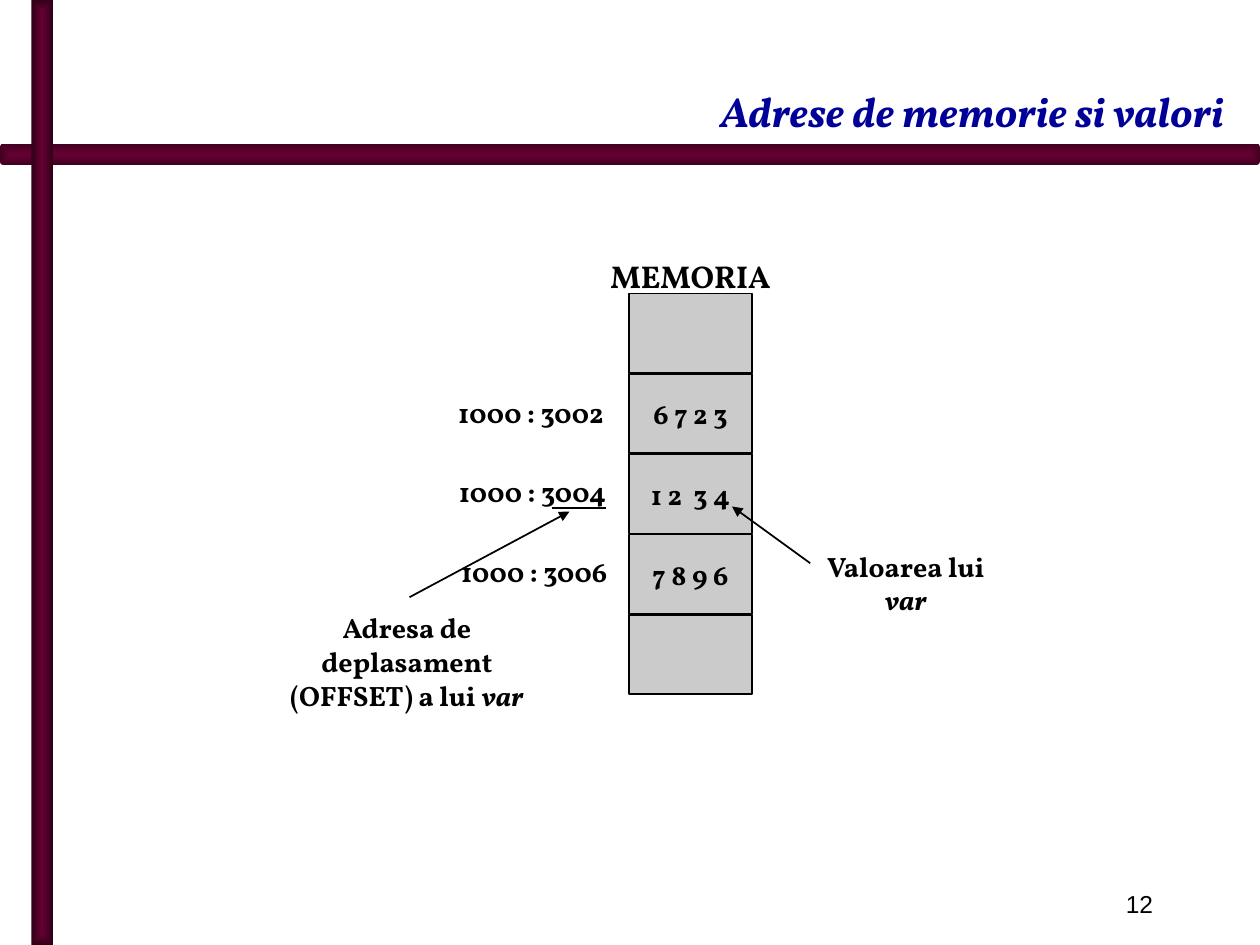
from lxml.etree import SubElement
from pptx import Presentation
from pptx.dml.color import RGBColor
from pptx.enum.shapes import MSO_CONNECTOR as Connector, MSO_SHAPE as Shape
from pptx.enum.text import MSO_ANCHOR as Anchor, PP_ALIGN as Align
from pptx.oxml.ns import qn
from pptx.util import Inches, Pt

BLACK = RGBColor(0x00, 0x00, 0x00)
NAVY = RGBColor(0x00, 0x00, 0x99)
GRAY = RGBColor(0xCB, 0xCB, 0xCB)
WINE = RGBColor(0x66, 0x00, 0x33)
DARK_WINE = RGBColor(0x41, 0x00, 0x20)
DEEP_WINE = RGBColor(0x2F, 0x00, 0x18)
FONT = "Vollkorn"

BARS = [
    (Shape.ROUNDED_RECTANGLE, (0, 1.14, 10, 0.17), DARK_WINE),
    (Shape.RECTANGLE, (0.25, 0, 0.17, 7.5), DEEP_WINE),
]
TITLE = "Adrese de memorie si valori"
PAGE_NUMBER = "12"
HEADING = "MEMORIA"
CELLS = ["", "6 7 2 3", "1 2  3 4", "7 8 9 6", ""]
CELL_LEFT, CELL_TOP, CELL_WIDTH, CELL_HEIGHT = 4.99, 2.33, 0.98, 0.63
CELL_PITCH = 0.6375
ADDRESSES = [(3.41, "1000 : 3002"), (3.43, "1000 : 3004"), (3.44, "1000 : 3006")]
ADDRESS_TOP, ADDRESS_PITCH = 3.09, 0.63
CAPTIONS = [
    ((1.96, 4.8, 2.54, 0.9), "Adresa de deplasament (OFFSET) a lui "),
    ((6.34, 4.31, 1.7, 0.64), "Valoarea lui "),
]
VARIABLE = "var"
LINES = [
    ((6.43, 4.47), (5.81, 4.02), True),
    ((3.25, 4.74), (4.52, 4.06), True),
    ((4.38, 4.03), (4.81, 4.03), False),
]


def format_run(run, size=16, font=FONT, color=BLACK, bold=True, italic=False):
    run.font.size = Pt(size)
    run.font.name = font
    run.font.color.rgb = color
    run.font.bold = bold
    run.font.italic = italic


def add_text(slide, box, text, align, anchor=Anchor.TOP, wrap=True, **style):
    shape = slide.shapes.add_textbox(*map(Inches, box))
    frame = shape.text_frame
    frame.word_wrap = wrap
    frame.vertical_anchor = anchor
    paragraph = frame.paragraphs[0]
    paragraph.text = text
    paragraph.alignment = align
    format_run(paragraph.runs[0], **style)
    return paragraph


def add_bar(slide, kind, box, edge_color):
    bar = slide.shapes.add_shape(kind, *map(Inches, box))
    bar.shadow.inherit = False
    bar.line.fill.background()
    bar.fill.gradient()
    stops = bar.fill.gradient_stops
    for stop, color, position in zip(stops, (WINE, edge_color), (0, 1)):
        stop.color.rgb = color
        stop.position = position
    gradient = bar.element.spPr.find(qn("a:gradFill"))
    gradient.remove(gradient.find(qn("a:lin")))
    center = SubElement(gradient, qn("a:path"), {"path": "shape"})
    SubElement(center, qn("a:fillToRect"), dict.fromkeys("ltrb", "50000"))


def add_cell(slide, top, text):
    box = (CELL_LEFT, top, CELL_WIDTH, CELL_HEIGHT)
    cell = slide.shapes.add_shape(Shape.RECTANGLE, *map(Inches, box))
    cell.shadow.inherit = False
    cell.fill.solid()
    cell.fill.fore_color.rgb = GRAY
    cell.line.color.rgb = BLACK
    cell.line.width = Pt(1)
    if text:
        cell.text_frame.word_wrap = False
        cell.text_frame.vertical_anchor = Anchor.MIDDLE
        paragraph = cell.text_frame.paragraphs[0]
        paragraph.text = text
        paragraph.alignment = Align.CENTER
        format_run(paragraph.runs[0])


def add_line(slide, start, end, has_arrow):
    line = slide.shapes.add_connector(Connector.STRAIGHT, *map(Inches, start + end))
    line.line.color.rgb = BLACK
    line.line.width = Pt(1)
    properties = line.element.spPr
    if has_arrow:
        SubElement(properties.find(qn("a:ln")), qn("a:tailEnd"), {"type": "triangle"})
    SubElement(properties, qn("a:effectLst"))


def main():
    presentation = Presentation()
    presentation.slide_width = Inches(10)
    presentation.slide_height = Inches(7.5)
    slide = presentation.slides.add_slide(presentation.slide_layouts[6])

    for kind, box, edge_color in BARS:
        add_bar(slide, kind, box, edge_color)
    add_text(slide, (7.17, 6.92, 2.08, 0.5), PAGE_NUMBER, Align.RIGHT, Anchor.MIDDLE,
             size=14, font="Arial", bold=False)
    add_text(slide, (0.83, 0.17, 8.98, 0.96), TITLE, Align.RIGHT, Anchor.BOTTOM,
             size=24, color=NAVY, italic=True)

    for row, text in enumerate(CELLS):
        add_cell(slide, CELL_TOP + row * CELL_PITCH, text)
    for row, (left, text) in enumerate(ADDRESSES):
        top = ADDRESS_TOP + row * ADDRESS_PITCH
        add_text(slide, (left, top, 1.48, 0.37), text, Align.RIGHT)
    for box, text in CAPTIONS:
        run = add_text(slide, box, text, Align.CENTER).add_run()
        run.text = VARIABLE
        format_run(run, italic=True)
    for start, end, has_arrow in LINES:
        add_line(slide, start, end, has_arrow)
    add_text(slide, (4.59, 1.99, 1.78, 0.4), HEADING, Align.CENTER, size=18)

    presentation.save("out.pptx")


if __name__ == "__main__":
    main()
